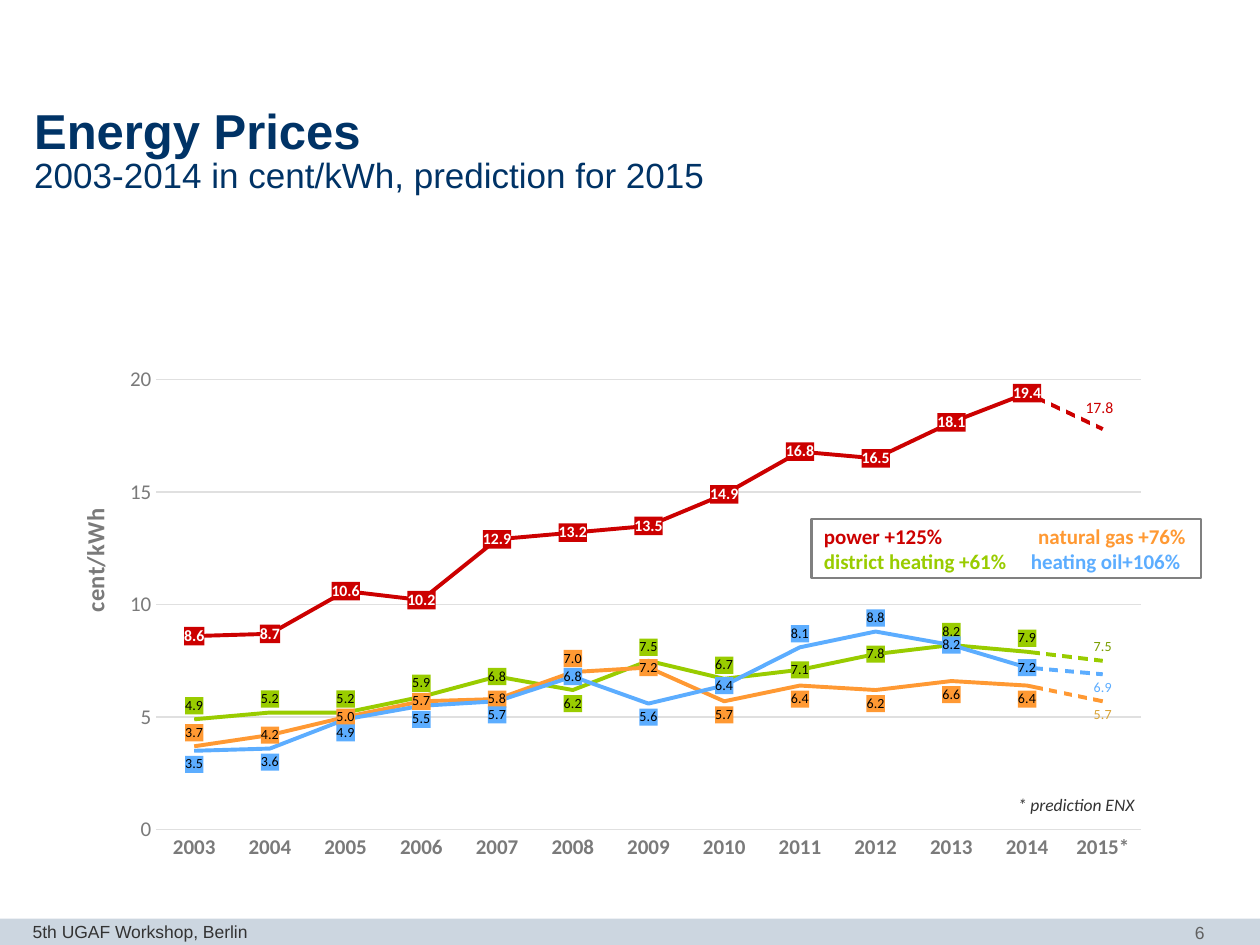
from pptx import Presentation
from pptx.chart.data import CategoryChartData
from pptx.dml.color import RGBColor
from pptx.enum.chart import XL_CHART_TYPE as ChartType, XL_MARKER_STYLE as Marker, XL_TICK_MARK as Tick
from pptx.enum.shapes import MSO_SHAPE as Shape
from pptx.enum.text import MSO_ANCHOR as Anchor, MSO_AUTO_SIZE as AutoSize, PP_ALIGN as Align
from pptx.oxml import parse_xml
from pptx.oxml.ns import nsdecls, qn
from pptx.util import Cm, Pt

RED, GREEN, ORANGE, BLUE = "CC0000", "99CC00", "FF9933", "5CADFF"
NAVY, GREY, DARK, GRID, WHITE = "003366", "7A7A7A", "333333", "E0E0E0", "FFFFFF"

YEARS = [str(year) for year in range(2003, 2015)] + ["2015*"]
# One letter per year places each label: c centre, t top, b bottom
PRICES = [
    dict(color=RED, text=WHITE, last=RED, size=9, bold=1, places="cccccccccccct",
         values=[8.6, 8.7, 10.6, 10.2, 12.9, 13.2, 13.5, 14.9, 16.8, 16.5, 18.1, 19.4, 17.8]),
    dict(color=GREEN, text="000000", last="7A9E00", size=8, bold=0, places="ttttcbttccttt",
         values=[4.9, 5.2, 5.2, 5.9, 6.8, 6.2, 7.5, 6.7, 7.1, 7.8, 8.2, 7.9, 7.5]),
    dict(color=ORANGE, text="000000", last="D9A336", size=8, bold=0, places="tcccctcbbbbbb",
         values=[3.7, 4.2, 5.0, 5.7, 5.8, 7.0, 7.2, 5.7, 6.4, 6.2, 6.6, 6.4, 5.7]),
    dict(color=BLUE, text="000000", last=BLUE, size=8, bold=0, places="bbbbbcbcttccb",
         values=[3.5, 3.6, 4.9, 5.5, 5.7, 6.8, 5.6, 6.4, 8.1, 8.8, 8.2, 7.2, 6.9]),
]
# Start and step, within the chart, of the gaps that dash each forecast line
GAPS = [(20.04, 4.17, 0.3, 0.13), (19.94, 9.17, 0.32, 0.05),
        (19.99, 9.88, 0.3, 0.07), (19.99, 9.5, 0.32, 0.03)]


def rgb(color):
    return RGBColor.from_string(color)


def style_font(font, size, color, name="Calibri", bold=False, italic=False):
    font.size, font.name, font.bold, font.italic = Pt(size), name, bold, italic
    font.color.rgb = rgb(color)


def add_run(p, text, size, color, **style):
    r = p.add_run()
    r.text = text
    style_font(r.font, size, color, **style)


def add_rect(slide, box, fill, line=None, width=0.75):
    s = slide.shapes.add_shape(Shape.RECTANGLE, *map(Cm, box))
    s.shadow.inherit = False
    s.fill.solid()
    s.fill.fore_color.rgb = rgb(fill)
    if line:
        s.line.color.rgb = rgb(line)
        s.line.width = Pt(width)
    else:
        s.line.fill.background()
    return s


def add_text(slide, box, text, size, color, align=Align.LEFT, anchor=Anchor.MIDDLE,
             wrap=True, **style):
    tf = slide.shapes.add_textbox(*map(Cm, box)).text_frame
    tf.word_wrap, tf.vertical_anchor = wrap, anchor
    p = tf.paragraphs[0]
    p.alignment = align
    add_run(p, text, size, color, **style)


def add_title(slide, box):
    s = slide.shapes.title
    s.left, s.top, s.width, s.height = map(Cm, box)
    tf = s.text_frame
    tf.margin_left = tf.margin_top = tf.margin_right = tf.margin_bottom = 0
    tf.vertical_anchor, tf.auto_size, tf.word_wrap = Anchor.TOP, AutoSize.NONE, True
    p = tf.paragraphs[0]
    p.alignment, p.line_spacing = Align.LEFT, 0.85
    add_run(p, "Energy Prices", 28, NAVY, name="Arial", bold=True)
    p.add_line_break()
    add_run(p, "2003-2014 in cent/kWh, prediction for 2015", 20, NAVY, name="Arial")


def layout_xml(inner):
    return f'<c:layout {nsdecls("c")}><c:manualLayout>{inner}</c:manualLayout></c:layout>'


def values_xml(**values):
    return "".join(f'<c:{name} val="{value}"/>' for name, value in values.items())


def label_xml(place, fill, color, size, bold):
    """Format, fill, font and position shared by one label or a whole series."""
    position = {"c": "ctr", "t": "t", "b": "b"}[place]
    paint = f'<a:solidFill><a:srgbClr val="{fill}"/></a:solidFill>' if fill else "<a:noFill/>"
    flags = values_xml(showLegendKey=0, showVal=1, showCatName=0, showSerName=0,
                       showPercent=0, showBubbleSize=0)
    return (f'<c:numFmt formatCode="0.0" sourceLinked="0"/><c:spPr>{paint}</c:spPr>'
            f'<c:txPr><a:bodyPr/><a:p><a:pPr><a:defRPr sz="{size * 100}" b="{bold}">'
            f'<a:solidFill><a:srgbClr val="{color}"/></a:solidFill><a:latin typeface="Calibri"/>'
            f'</a:defRPr></a:pPr><a:endParaRPr lang="en-US"/></a:p></c:txPr>'
            f'<c:dLblPos val="{position}"/>{flags}')


def label_series(series, price):
    """Fill the label of each known year; the series default and the forecast stay clear."""
    size, bold, places = price["size"], price["bold"], price["places"]
    points = [label_xml(place, price["color"], price["text"], size, bold)
              for place in places[:-1]]
    forecast = label_xml(places[-1], None, price["last"], size, 0)
    shift = layout_xml(values_xml(x=-0.003, y=-0.01)) if price["color"] == RED else ""
    points.append(shift + forecast)
    inner = "".join(f'<c:dLbl><c:idx val="{i}"/>{xml}</c:dLbl>' for i, xml in enumerate(points))
    labels = parse_xml(f'<c:dLbls {nsdecls("c", "a")}>{inner}'
                       f'{label_xml("c", None, price["text"], size, bold)}</c:dLbls>')
    old = series.data_labels._element
    old.getparent().replace(old, labels)


def set_layout(parent, index, target="", **edges):
    """Fix a chart part at fractions of the chart's size."""
    for old in parent.findall(qn("c:layout")):
        parent.remove(old)
    modes = values_xml(xMode="edge", yMode="edge")
    parent.insert(index, parse_xml(layout_xml(target + modes + values_xml(**edges))))


def style_axes(chart):
    cat, val = chart.category_axis, chart.value_axis
    for axis in (cat, val):
        axis.major_tick_mark = axis.minor_tick_mark = Tick.NONE
        style_font(axis.tick_labels.font, 12, GREY, bold=axis is cat)
    val.minimum_scale, val.maximum_scale, val.major_unit = 0, 20, 5
    val.tick_labels.number_format, val.tick_labels.number_format_is_linked = "0", False
    val.format.line.fill.background()
    for line in (cat.format.line, val.major_gridlines.format.line):
        line.color.rgb, line.width = rgb(GRID), Pt(0.75)
    title = val.axis_title
    add_run(title.text_frame.paragraphs[0], "cent/kWh", 14, GREY, bold=True)
    set_layout(title._element, 1, x=0.02, y=0.45)


def add_price_chart(slide, box):
    data = CategoryChartData(number_format="0.0")
    data.categories = YEARS
    for i, price in enumerate(PRICES, 1):
        data.add_series(f"Series {i}", price["values"])
    chart = slide.shapes.add_chart(ChartType.LINE, *map(Cm, box), data).chart
    chart.has_legend = chart.has_title = False
    style_font(chart.font, 10, DARK)
    chart.plots[0].vary_by_categories = False
    style_axes(chart)
    set_layout(chart._chartSpace.chart.plotArea, 0, values_xml(layoutTarget="inner"),
               x=0.096, y=0.271, w=0.902, h=0.648)
    for series, price in zip(chart.plots[0].series, PRICES):
        series.smooth, series.marker.style = False, Marker.NONE
        series.format.line.color.rgb = rgb(price["color"])
        series.format.line.width = Pt(2.25)
        label_series(series, price)


def add_legend(slide, box):
    tf = add_rect(slide, box, WHITE, "808080", 1.5).text_frame
    tf.word_wrap, tf.vertical_anchor = True, Anchor.MIDDLE
    rows = [(4.32, ("power +125%\t", RED), ("natural gas +76%", ORANGE)),
            (4.17, ("district heating +61%\t", GREEN), ("heating oil+106%", BLUE))]
    for i, (tab, *entries) in enumerate(rows):
        p = tf.add_paragraph() if i else tf.paragraphs[0]
        p.alignment = Align.LEFT
        p._p.get_or_add_pPr().append(parse_xml(
            f'<a:tabLst {nsdecls("a")}><a:tab pos="{Cm(tab)}" algn="l"/></a:tabLst>'))
        for text, color in entries:
            add_run(p, text, 12, color, bold=True)


def add_price_region(slide, box):
    x, y = box[:2]
    add_price_chart(slide, box)
    add_legend(slide, (x + 15.32, y + 6.6, 7.85, 1.19))
    add_text(slide, (x + 19.23, y + 12.02, 3, 0.69), "* prediction ENX", 10, DARK,
             anchor=Anchor.TOP, wrap=False, italic=True)
    for left, top, dx, dy in GAPS:
        for i in range(4):
            add_rect(slide, (x + left + i * dx, y + top + i * dy, 0.1, 0.2), WHITE, WHITE)


def add_footer(slide, box):
    x, y, w, h = box
    add_rect(slide, box, "CCD6E0")
    add_text(slide, (x + w - 4.27, y - 0.03, 3.4, 0.61), "6", 10, "606060",
             align=Align.RIGHT, name="Arial")
    add_text(slide, (x + 0.41, y - 0.03, 20.85, 0.56), "5th UGAF Workshop, Berlin", 10, DARK,
             name="Arial")


def main():
    prs = Presentation()
    prs.slide_width, prs.slide_height = Cm(25.4), Cm(19.05)
    slide = prs.slides.add_slide(prs.slide_layouts[5])
    add_footer(slide, (0, 18.52, 25.4, 0.53))
    add_title(slide, (0.69, 2.21, 24, 1.19))
    add_price_region(slide, (1.04, 3.86, 22, 14))
    prs.save("out.pptx")


if __name__ == "__main__":
    main()
